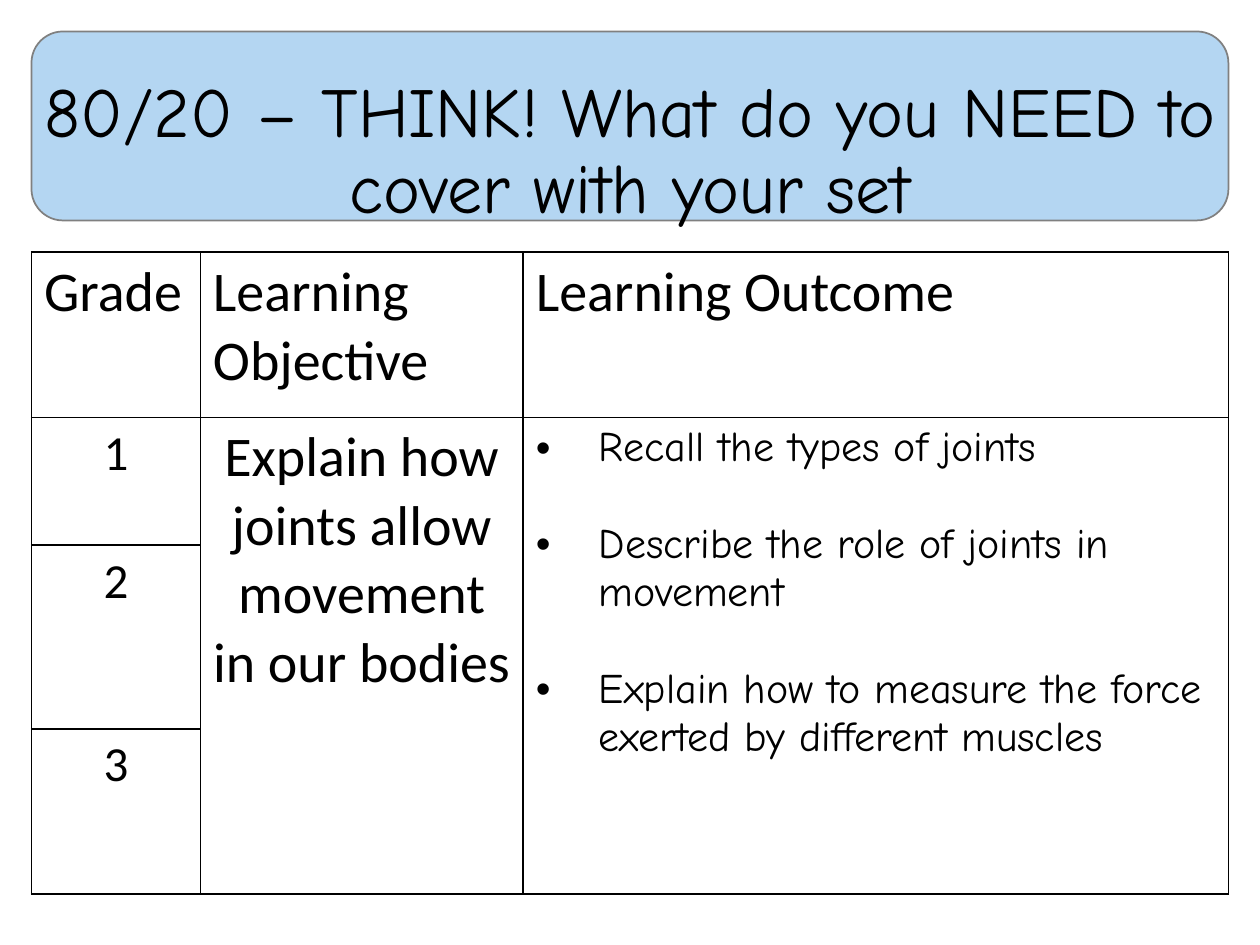
import pptx
import pptx.dml.color
import pptx.enum.shapes
import pptx.enum.text
import pptx.oxml
import pptx.oxml.ns
import pptx.util

Pt = pptx.util.Pt
RGBColor = pptx.dml.color.RGBColor
Align = pptx.enum.text.PP_ALIGN

BLACK = RGBColor(0x00, 0x00, 0x00)
WHITE = RGBColor(0xFF, 0xFF, 0xFF)
GREY = RGBColor(0x80, 0x80, 0x80)
PALE_BLUE = RGBColor(0xB4, 0xD6, 0xF2)

PLAIN_FONT = "Calibri"
HAND_FONT = "Comic Neue"

TITLE = "80/20 – THINK! What do you NEED to cover with your set"
HEADINGS = ["Grade", "Learning Objective", "Learning Outcome"]
GRADES = ["1", "2", "3"]
OBJECTIVE = "Explain how joints allow movement in our bodies"
OUTCOMES = [
    "Recall the types of joints",
    "Describe the role of joints in movement",
    "Explain how to measure the force exerted by different muscles",
]
COLUMN_WIDTHS = [96.5, 184.5, 403]
ROW_HEIGHTS = [94.5, 73, 105, 94.5]


def format_text(text_frame, size, font_name=PLAIN_FONT, alignment=Align.LEFT):
    for paragraph in text_frame.paragraphs:
        paragraph.alignment = alignment
        for run in paragraph.runs:
            run.font.size = Pt(size)
            run.font.name = font_name
            run.font.color.rgb = BLACK


def add_bullets(text_frame, indent, gap):
    for index, paragraph in enumerate(text_frame.paragraphs):
        if index:
            paragraph.space_before = Pt(gap)
        properties = paragraph._p.get_or_add_pPr()
        properties.set("marL", str(Pt(indent)))
        properties.set("indent", str(-Pt(indent)))
        namespace = pptx.oxml.ns.nsdecls("a")
        for tag in ('a:buFont {} typeface="Arial"', 'a:buChar {} char="•"'):
            properties.append(pptx.oxml.parse_xml(f"<{tag.format(namespace)}/>"))


def style_cell(cell):
    """Give the cell a white fill and thin black borders."""
    cell.fill.solid()
    cell.fill.fore_color.rgb = WHITE
    properties = cell._tc.get_or_add_tcPr()
    for position, side in enumerate(("lnL", "lnR", "lnT", "lnB")):
        border = pptx.oxml.parse_xml(
            f'<a:{side} {pptx.oxml.ns.nsdecls("a")} w="{Pt(1)}">'
            f'<a:solidFill><a:srgbClr val="{BLACK}"/></a:solidFill></a:{side}>'
        )
        properties.insert(position, border)


def add_banner(slide, left, top, width, height):
    banner = slide.shapes.add_shape(
        pptx.enum.shapes.MSO_SHAPE.ROUNDED_RECTANGLE,
        Pt(left), Pt(top), Pt(width), Pt(height),
    )
    banner.shadow.inherit = False
    banner.fill.solid()
    banner.fill.fore_color.rgb = PALE_BLUE
    banner.line.color.rgb = GREY
    banner.line.width = Pt(1)

    title = slide.shapes.title
    title.left, title.top = Pt(left), Pt(top)
    title.width, title.height = Pt(width), Pt(height + 8)
    banner.element.addnext(title.element)  # the title lies over the banner
    text_frame = title.text_frame
    text_frame.text = TITLE
    text_frame.word_wrap = True
    text_frame.auto_size = pptx.enum.text.MSO_AUTO_SIZE.NONE
    text_frame.vertical_anchor = pptx.enum.text.MSO_ANCHOR.BOTTOM
    text_frame.paragraphs[0].line_spacing = 0.9
    format_text(text_frame, 40, HAND_FONT, Align.CENTER)


def add_objectives_table(slide, left, top):
    table = slide.shapes.add_table(
        len(ROW_HEIGHTS), len(COLUMN_WIDTHS), Pt(left), Pt(top),
        Pt(sum(COLUMN_WIDTHS)), Pt(sum(ROW_HEIGHTS)),
    ).table
    table.first_row = False
    table.horz_banding = False
    for column, width in zip(table.columns, COLUMN_WIDTHS):
        column.width = Pt(width)
    for row, height in zip(table.rows, ROW_HEIGHTS):
        row.height = Pt(height)
    for cell in table.iter_cells():
        style_cell(cell)

    for column_index, heading in enumerate(HEADINGS):
        text_frame = table.cell(0, column_index).text_frame
        text_frame.text = heading
        format_text(text_frame, 32)
    for row_index, grade in enumerate(GRADES, start=1):
        text_frame = table.cell(row_index, 0).text_frame
        text_frame.text = grade
        format_text(text_frame, 28, alignment=Align.CENTER)

    for column_index in (1, 2):
        table.cell(1, column_index).merge(table.cell(len(GRADES), column_index))
    objective = table.cell(1, 1).text_frame
    objective.text = OBJECTIVE
    format_text(objective, 32, alignment=Align.CENTER)
    outcomes = table.cell(1, 2).text_frame
    outcomes.text = "\n".join(OUTCOMES)
    format_text(outcomes, 24, HAND_FONT)
    add_bullets(outcomes, indent=36, gap=27.6)


def main():
    presentation = pptx.Presentation()
    presentation.slide_width, presentation.slide_height = Pt(720), Pt(540)
    slide = presentation.slides.add_slide(presentation.slide_layouts[0])
    subtitle = slide.placeholders[1].element
    subtitle.getparent().remove(subtitle)
    add_banner(slide, 18, 18, 684, 108)
    add_objectives_table(slide, 18, 144)
    presentation.save("out.pptx")


if __name__ == "__main__":
    main()
